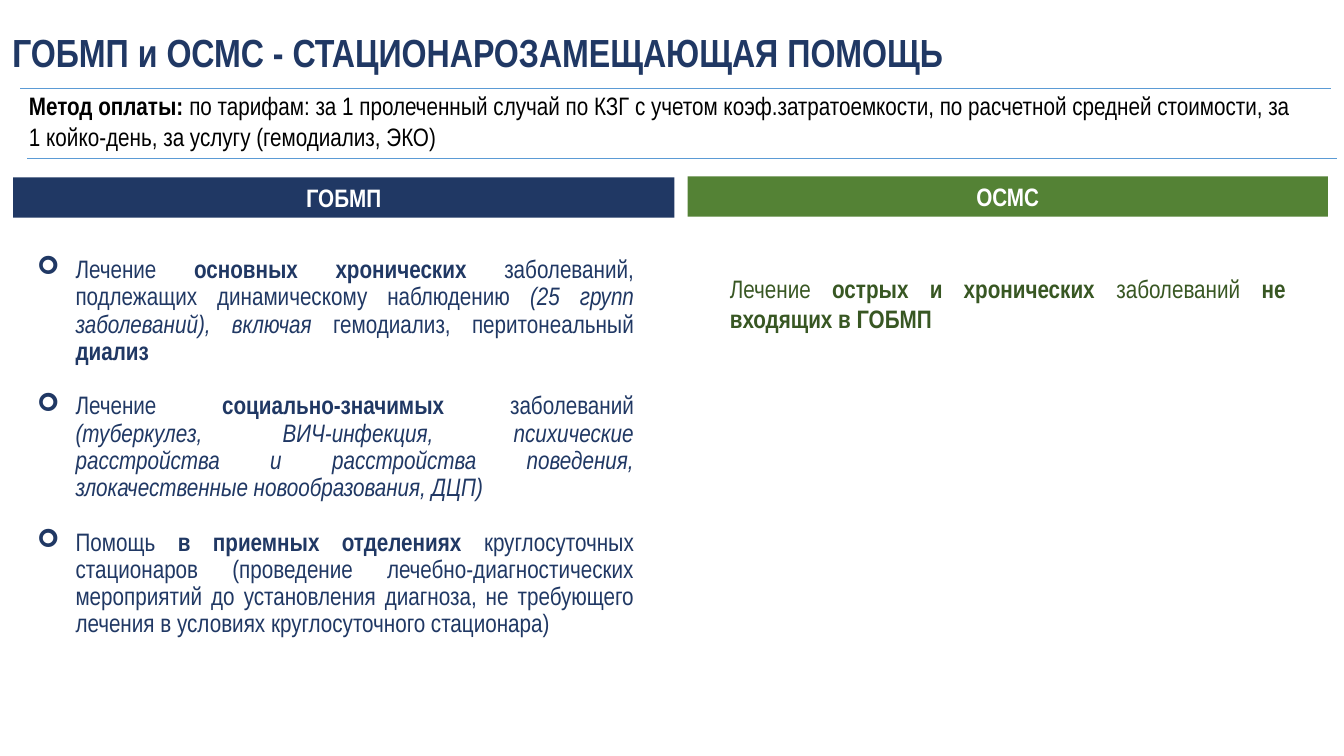
from lxml.etree import SubElement
from pptx import Presentation
from pptx.dml.color import RGBColor
from pptx.enum.shapes import MSO_CONNECTOR, MSO_SHAPE
from pptx.enum.text import MSO_ANCHOR, MSO_AUTO_SIZE, PP_ALIGN
from pptx.oxml.ns import qn
from pptx.util import Inches, Pt

SLIDE_WIDTH = Inches(13.33)
SLIDE_HEIGHT = Inches(7.5)
FONT = "Arial Narrow"
NAVY = RGBColor(0x20, 0x38, 0x64)
GREEN = RGBColor(0x54, 0x82, 0x35)
DARK_GREEN = RGBColor(0x38, 0x57, 0x23)
BLUE = RGBColor(0x5B, 0x9B, 0xD5)
BLACK = RGBColor(0x00, 0x00, 0x00)
WHITE = RGBColor(0xFF, 0xFF, 0xFF)

TITLE = [[("ГОБМП и ОСМС - СТАЦИОНАРОЗАМЕЩАЮЩАЯ ПОМОЩЬ", "b")]]
PAYMENT = [[
    ("Метод оплаты: ", "b"),
    ("по тарифам: за 1 пролеченный случай по КЗГ с учетом коэф.затратоемкости, "
     "по расчетной средней стоимости, за 1 койко-день, за услугу (гемодиализ, ЭКО)", ""),
]]
GUARANTEED_CARE = [
    [("Лечение ", ""), ("основных хронических", "b"),
     (" заболеваний, подлежащих динамическому наблюдению ", ""),
     ("(25 групп заболеваний), включая", "i"),
     (" гемодиализ, перитонеальный ", ""), ("диализ", "b")],
    [("Лечение ", ""), ("социально-значимых", "b"), (" заболеваний ", ""),
     ("(туберкулез, ВИЧ-инфекция, психические расстройства и расстройства "
      "поведения, злокачественные новообразования, ДЦП)", "i")],
    [("Помощь ", ""), ("в приемных отделениях ", "b"),
     ("круглосуточных стационаров (проведение лечебно-диагностических мероприятий "
      "до установления диагноза, не требующего лечения в условиях "
      "круглосуточного стационара)", "")],
]
INSURED_CARE = [[
    ("Лечение ", ""), ("острых и хронических ", "b"),
    ("заболеваний ", ""), ("не входящих в ГОБМП", "b"),
]]
HEADERS = [
    ("ГОБМП", NAVY, (0.98, 23.47, 49.2, 5.33)),
    ("ОСМС", GREEN, (51.16, 23.33, 47.64, 5.33)),
]
RULES = [(1.5, 99.03, 11.73), (2.03, 99.47, 20.93)]


def across(percent):
    return round(SLIDE_WIDTH * percent / 100)


def down(percent):
    return round(SLIDE_HEIGHT * percent / 100)


def frame(left, top, width, height):
    return across(left), down(top), across(width), down(height)


def place(shape, area):
    shape.left, shape.top, shape.width, shape.height = frame(*area)
    return shape


def set_bullet(paragraph, bullet):
    properties = paragraph._p.get_or_add_pPr()
    indent = Inches(0.38) if bullet else 0
    properties.set("marL", str(indent))
    properties.set("indent", str(-indent))
    if bullet:
        SubElement(properties, qn("a:buFont"), typeface="Wingdings")
        SubElement(properties, qn("a:buChar"), char=bullet)
    else:
        SubElement(properties, qn("a:buNone"))


def write_text(shape, paragraphs, color, size=18, align=PP_ALIGN.LEFT,
               anchor=MSO_ANCHOR.TOP, spacing=1.0, gap=0, bullet=None):
    text_frame = shape.text_frame
    text_frame.word_wrap = True
    text_frame.auto_size = MSO_AUTO_SIZE.NONE
    text_frame.vertical_anchor = anchor
    for index, runs in enumerate(paragraphs):
        paragraph = text_frame.paragraphs[0] if index == 0 else text_frame.add_paragraph()
        paragraph.alignment = align
        paragraph.line_spacing = spacing
        paragraph.space_before = Pt(gap if index else 0)
        paragraph.space_after = Pt(0)
        set_bullet(paragraph, bullet)
        for text, style in runs:
            run = paragraph.add_run()
            run.text = text
            run.font.name = FONT
            run.font.size = Pt(size)
            run.font.bold = style == "b"
            run.font.italic = style == "i"
            run.font.color.rgb = color


def add_header(slide, text, color, area):
    shape = slide.shapes.add_shape(MSO_SHAPE.RECTANGLE, *frame(*area))
    shape.shadow.inherit = False
    shape.fill.solid()
    shape.fill.fore_color.rgb = color
    shape.line.fill.background()
    write_text(shape, [[(text, "b")]], WHITE, align=PP_ALIGN.CENTER,
               anchor=MSO_ANCHOR.MIDDLE)


def add_rule(slide, start, end, height):
    rule = slide.shapes.add_connector(
        MSO_CONNECTOR.STRAIGHT, across(start), down(height), across(end), down(height))
    rule.line.color.rgb = BLUE
    rule.line.width = Pt(0.5)
    SubElement(rule._element.spPr, qn("a:effectLst"))


def main():
    presentation = Presentation()
    presentation.slide_width = SLIDE_WIDTH
    presentation.slide_height = SLIDE_HEIGHT
    slide = presentation.slides.add_slide(presentation.slide_layouts.get_by_name("Two Content"))
    title, guaranteed, insured = slide.placeholders

    write_text(place(title, (0.15, 4.13, 99.85, 6.27)), TITLE, NAVY, size=28,
               anchor=MSO_ANCHOR.MIDDLE, spacing=0.9)
    write_text(place(guaranteed, (2.02, 31.6, 45.91, 55.2)), GUARANTEED_CARE, NAVY,
               align=PP_ALIGN.JUSTIFY, anchor=MSO_ANCHOR.MIDDLE, spacing=0.9,
               gap=19.5, bullet="➢")
    write_text(place(insured, (53.56, 35.47, 42.84, 9.47)), INSURED_CARE, DARK_GREEN,
               align=PP_ALIGN.JUSTIFY)
    payment = slide.shapes.add_textbox(*frame(1.42, 11.33, 95.87, 9.47))
    write_text(payment, PAYMENT, BLACK)
    for text, color, area in HEADERS:
        add_header(slide, text, color, area)
    for start, end, height in RULES:
        add_rule(slide, start, end, height)

    presentation.save("out.pptx")


if __name__ == "__main__":
    main()
